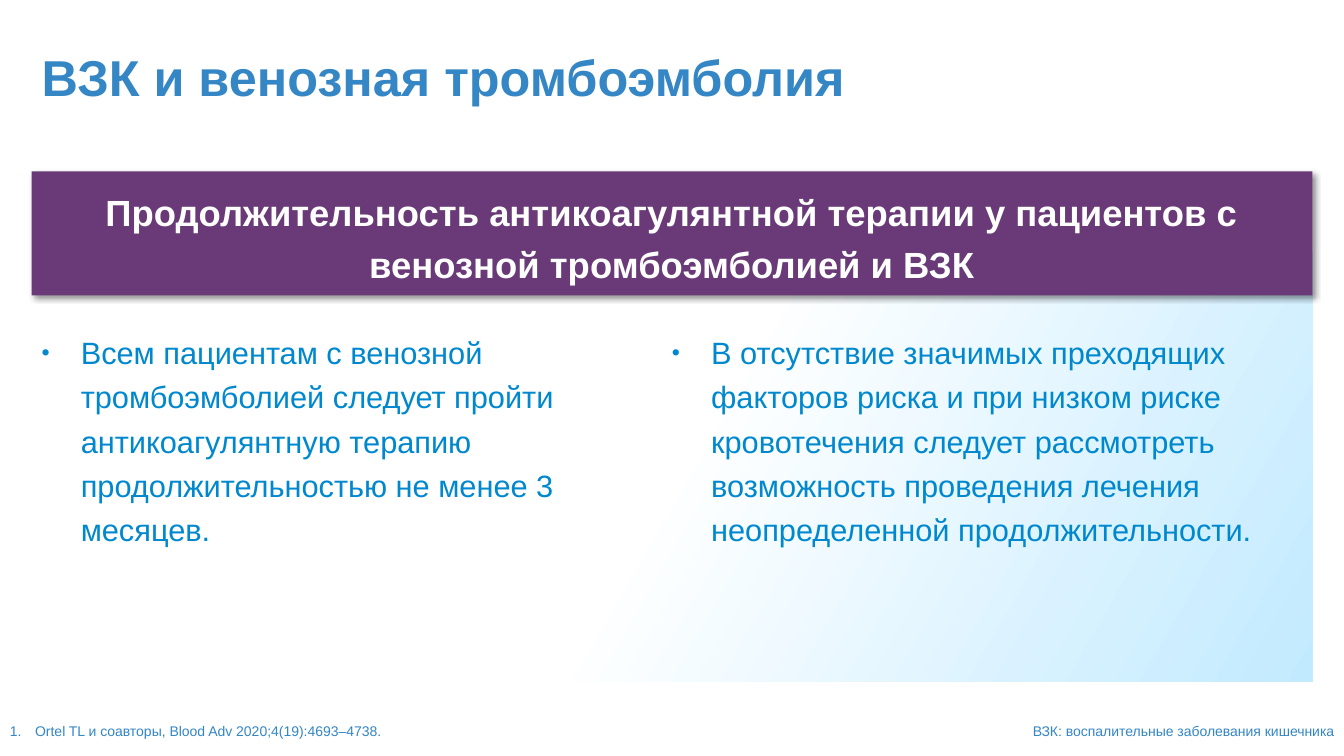
from lxml import etree
from pptx import Presentation
from pptx.dml.color import RGBColor
from pptx.enum.shapes import MSO_SHAPE
from pptx.enum.text import MSO_ANCHOR, MSO_AUTO_SIZE, PP_ALIGN
from pptx.oxml import parse_xml
from pptx.oxml.ns import nsdecls, qn
from pptx.util import Pt

RECT = MSO_SHAPE.RECTANGLE
MIDDLE, TOP = MSO_ANCHOR.MIDDLE, MSO_ANCHOR.TOP
FIXED = MSO_AUTO_SIZE.NONE
LEFT, CENTER, RIGHT = PP_ALIGN.LEFT, PP_ALIGN.CENTER, PP_ALIGN.RIGHT

TITLE = "ВЗК и венозная тромбоэмболия"
BANNER = "Продолжительность антикоагулянтной терапии у пациентов с венозной тромбоэмболией и ВЗК"
POINTS = [
    "Всем пациентам с венозной тромбоэмболией следует пройти антикоагулянтную терапию продолжительностью не менее 3 месяцев.",
    "В отсутствие значимых преходящих факторов риска и при низком риске кровотечения следует рассмотреть возможность проведения лечения неопределенной продолжительности.",
]
SOURCE = "Ortel TL и соавторы, Blood Adv 2020;4(19):4693–4738."
NOTE = "ВЗК: воспалительные заболевания кишечника"

THEME = {
    "font": "Arial",
    "title": (36, "3486C5", True),
    "banner": (26, "FFFFFF", True),
    "point": (22, "0088CE", False),
    "foot": (10, "3486C5", False),
    "purple": "693A77",
    "fade": [(0, "FFFFFF"), (50, "FFFFFF"), (100, "C2EAFF")],
}

WIDE, HIGH = 960, 540
EDGE, SPAN = 22.5, 915
INSET = 7.2
COLUMN = SPAN / 2 + INSET
FOOT_TOP, FOOT_HIGH = 504.75, 35.25


def place(shape, left, top, width, height):
    shape.left, shape.top = Pt(left), Pt(top)
    shape.width, shape.height = Pt(width), Pt(height)


def bullet(par, indent, *marks):
    props = par._p.get_or_add_pPr()
    props.set("marL", str(Pt(indent)))
    props.set("indent", str(-Pt(indent)))
    for tag, key, value in marks:
        etree.SubElement(props, qn(tag)).set(key, value)


def write(shape, text, style, align=LEFT, anchor=MIDDLE, space=1.0, indent=0, marks=()):
    frame = shape.text_frame
    frame.word_wrap = True
    frame.auto_size = FIXED
    frame.vertical_anchor = anchor
    frame.text = text
    par = frame.paragraphs[0]
    if marks:
        bullet(par, indent, *marks)
    par.alignment = align
    par.line_spacing = space
    par.space_before = Pt(0)
    size, color, bold = THEME[style]
    font = par.runs[0].font
    font.name, font.size, font.bold = THEME["font"], Pt(size), bold
    font.color.rgb = RGBColor.from_string(color)


def block(slide, top, height):
    shape = slide.shapes.add_shape(RECT, Pt(EDGE), Pt(top), Pt(SPAN), Pt(height))
    shape.shadow.inherit = False
    shape.line.fill.background()
    return shape


def fade(shape):
    shape.fill.gradient()
    grad = shape._element.spPr.find(qn("a:gradFill"))
    stops = grad.find(qn("a:gsLst"))
    for stop in list(stops):
        stops.remove(stop)
    for spot, color in THEME["fade"]:
        stops.append(parse_xml(
            f'<a:gs {nsdecls("a")} pos="{spot * 1000}"><a:srgbClr val="{color}"/></a:gs>'))
    grad.find(qn("a:lin")).set("ang", "1800000")


def shade(shape):
    effects = shape._element.spPr.find(qn("a:effectLst"))
    effects.append(parse_xml(
        f'<a:outerShdw {nsdecls("a")} blurRad="{Pt(4)}" dist="{Pt(3)}" dir="2700000" '
        'algn="tl" rotWithShape="0"><a:srgbClr val="000000">'
        '<a:alpha val="40000"/></a:srgbClr></a:outerShdw>'))


def main():
    deck = Presentation()
    deck.slide_width, deck.slide_height = Pt(WIDE), Pt(HIGH)
    slide = deck.slides.add_slide(deck.slide_layouts[3])
    title, *bodies = slide.placeholders

    panel = block(slide, 179.5, 307.5)
    fade(panel)
    slide.shapes._spTree.insert(2, panel._element)

    place(title, EDGE, 16.5, 822, 82)
    write(title, TITLE, "title", space=0.9)

    dot = [("a:buSzPct", "val", "75000"), ("a:buChar", "char", "•")]
    for index, (body, text) in enumerate(zip(bodies, POINTS)):
        place(body, EDGE + index * (COLUMN - 2 * INSET), 229.5, COLUMN, 170)
        write(body, text, "point", anchor=TOP, space=1.2, indent=28, marks=dot)

    banner = block(slide, 122.5, 88.5)
    banner.fill.solid()
    banner.fill.fore_color.rgb = RGBColor.from_string(THEME["purple"])
    shade(banner)
    write(banner, BANNER, "banner", align=CENTER, space=1.2)
    banner.text_frame.margin_top = banner.text_frame.margin_bottom = Pt(5.75)

    number = [("a:buAutoNum", "type", "arabicPeriod")]
    for left, width, text, align, marks in [
        (0, 480, SOURCE, LEFT, number),
        (425, 535, NOTE, RIGHT, ()),
    ]:
        box = slide.shapes.add_textbox(Pt(left), Pt(FOOT_TOP), Pt(width), Pt(FOOT_HIGH))
        write(box, text, "foot", align=align, indent=18, marks=marks)

    deck.save("out.pptx")


if __name__ == "__main__":
    main()
